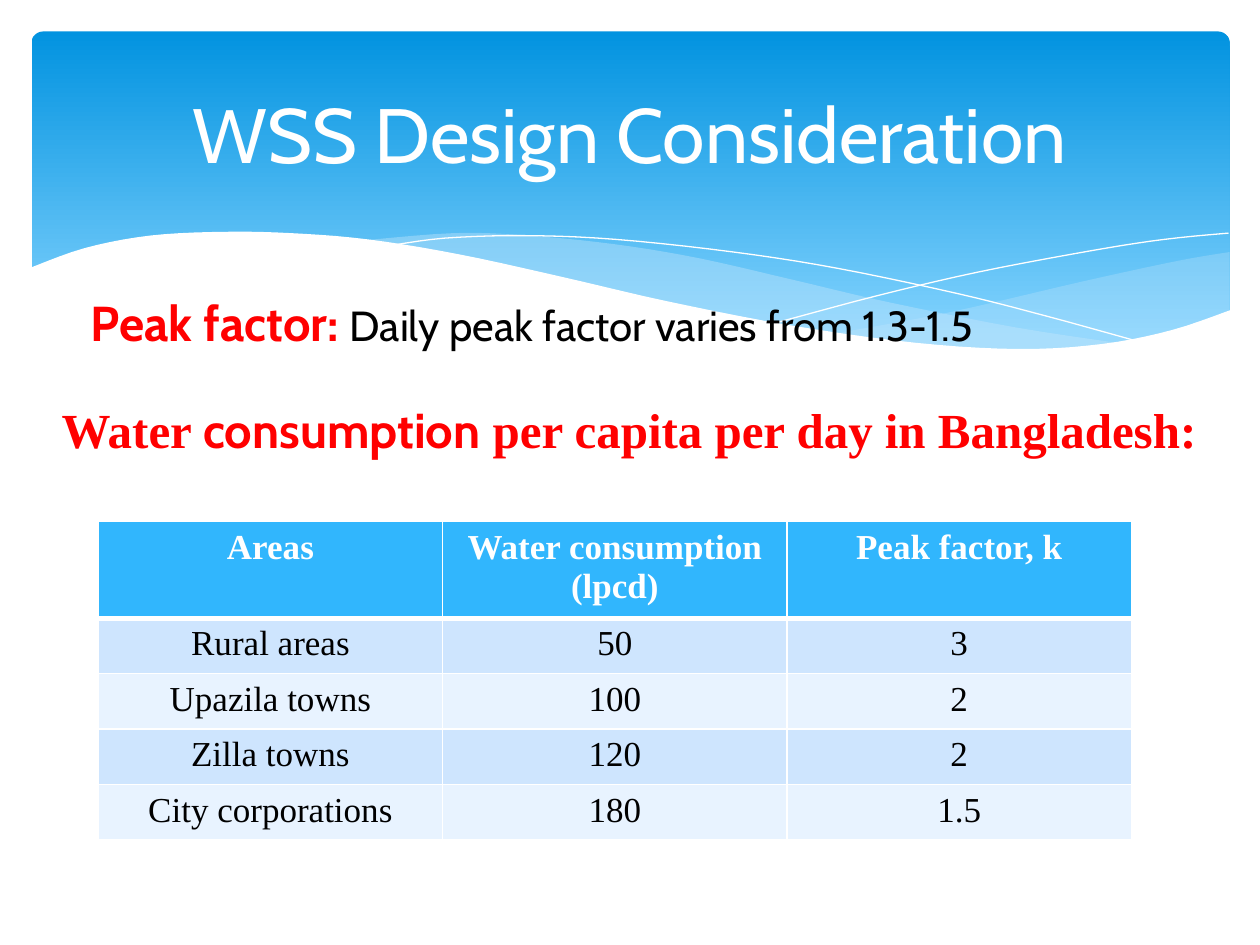
from lxml.etree import SubElement
from pptx import Presentation
from pptx.dml.color import RGBColor
from pptx.enum.shapes import MSO_SHAPE as SHAPE
from pptx.enum.text import MSO_ANCHOR as ANCHOR, MSO_AUTO_SIZE as AUTO, PP_ALIGN as ALIGN
from pptx.oxml import parse_xml
from pptx.oxml.ns import nsdecls, qn
from pptx.util import Emu, Inches, Pt

SANS, SERIF = "Cabin", "Times New Roman"
WHITE, BLACK, RED, MIST = "FFFFFF", "000000", "FF0000", "C6E7FC"
HEADER, BANDS = "31B6FD", ("CEE5FE", "E8F3FF")

TITLE = "WSS Design Consideration"
PEAK = [("Peak factor: ", dict(size=28, color=RED, bold=True)),
        ("Daily peak factor varies from 1.3-1.5", dict(size=24))]
HEADING = [("Water ", SERIF), ("consumption", SANS),
           (" per capita per day in Bangladesh:", SERIF)]
ROWS = [
    ("Areas", "Water consumption (lpcd)", "Peak factor, k"),
    ("Rural areas", "50", "3"),
    ("Upazila towns", "100", "2"),
    ("Zilla towns", "120", "2"),
    ("City corporations", "180", "1.5"),
]
WAVES = [
    dict(fill=MIST, alpha=29, curves=[
        [(9.76, 2), (9.35, 2.07), (8.61, 2.23), (7.53, 2.48), (6.61, 2.65)],
        [(6.61, 2.65), (7.19, 2.72), (8.03, 2.78), (8.81, 2.73), (9.35, 2.62), (9.76, 2.47)]]),
    dict(fill=MIST, alpha=40, curves=[
        [(8.93, 2.73), (8.07, 2.6), (7.06, 2.4), (6.29, 2.22), (5.55, 2.05), (4.89, 1.94),
         (4.2, 1.87), (3.61, 1.85), (2.86, 1.91)],
        [(2.86, 1.91), (3.62, 2.03), (4.49, 2.22), (5.3, 2.4), (6.34, 2.61), (7.09, 2.72),
         (7.85, 2.78), (8.48, 2.77), (8.93, 2.73)]]),
    dict(line=WHITE, curves=[
        [(3.09, 1.95), (3.53, 1.89), (4.16, 1.87), (4.89, 1.9), (5.82, 2), (6.65, 2.13),
         (7.6, 2.33), (8.31, 2.51), (9.07, 2.72)]]),
    dict(line=WHITE, curves=[
        [(6.13, 2.57), (6.95, 2.35), (7.76, 2.16), (8.66, 1.99), (9.24, 1.9), (9.75, 1.85)]]),
    dict(fill=WHITE, curves=[
        [(9.77, 2.46), (9.3, 2.62), (8.75, 2.73), (8.09, 2.77), (7.26, 2.72), (6.26, 2.58),
         (5.29, 2.39), (4.47, 2.2), (3.65, 2.02), (2.92, 1.9), (2.3, 1.85), (1.77, 1.84),
         (1.19, 1.87), (0.67, 1.97), (0.23, 2.13)],
        [(0.23, 3.29), (9.77, 3.29)]]),
]


def rgb(value):
    return RGBColor.from_string(value)


def place(s, left, top, width, height):
    s.left, s.top, s.width, s.height = map(Inches, (left, top, width, height))


def add_text(p, text, size=20, font=SERIF, color=BLACK, bold=False, align=None):
    r = p.add_run()
    r.text = text
    r.font.size, r.font.name, r.font.bold = Pt(size), font, bold
    r.font.color.rgb = rgb(color)
    if align is not None:
        p.alignment = align


def smooth(points, steps=5):
    padded = [points[0], *points, points[-1]]
    result = [points[0]]
    for a, b, c, d in zip(padded, padded[1:], padded[2:], padded[3:]):
        for t in (i / steps for i in range(1, steps + 1)):
            result.append(tuple(
                (2 * q + (r - p) * t + (2 * p - 5 * q + 4 * r - s) * t**2
                 + (3 * q - p - 3 * r + s) * t**3) / 2
                for p, q, r, s in zip(a, b, c, d)))
    return result


def add_wave(shapes, curves, fill=None, alpha=None, line=None):
    points = [(Inches(x), Inches(y)) for curve in curves for x, y in smooth(curve)]
    builder = shapes.build_freeform(*points[0])
    builder.add_line_segments(points[1:], close=fill is not None)
    s = builder.convert_to_shape()
    s.shadow.inherit = False
    if fill:
        s.fill.solid()
        s.fill.fore_color.rgb = rgb(fill)
        s.line.fill.background()
    else:
        s.fill.background()
        s.line.color.rgb = rgb(line)
        s.line.width = Emu(0)
    if alpha:
        color = s.element.spPr.find(qn("a:solidFill"))[0]
        SubElement(color, qn("a:alpha")).set("val", str(alpha * 1000))


def add_banner(shapes):
    s = shapes.add_shape(SHAPE.ROUNDED_RECTANGLE, 0, 0, 0, 0)
    place(s, 0.25, 0.25, 9.51, 2.7)
    s.adjustments[0] = 0.034
    s.shadow.inherit = False
    s.line.fill.background()
    s.fill.gradient()
    s.fill.gradient_angle = 270
    for stop, (position, color) in zip(s.fill.gradient_stops, [(0, "0293E0"), (0.9, "83D3FE")]):
        stop.position, stop.color.rgb = position, rgb(color)


def add_borders(cell, bottom):
    tcPr = cell._tc.get_or_add_tcPr()
    for i, (side, width) in enumerate(zip("LRTB", (1, 1, 1, bottom))):
        tcPr.insert(i, parse_xml(
            f'<a:ln{side} {nsdecls("a")} w="{Pt(width)}"><a:solidFill>'
            f'<a:srgbClr val="{WHITE}"/></a:solidFill></a:ln{side}>'))


def add_table(shapes):
    frame = shapes.add_table(len(ROWS), len(ROWS[0]), Inches(0.78), Inches(4.14),
                             Inches(8.2), Inches(2.5))
    table = frame.table
    for i, row in enumerate(ROWS):
        table.rows[i].height = Inches(0.44 if i else 0.75)
        for j, text in enumerate(row):
            cell = table.cell(i, j)
            cell.fill.solid()
            cell.fill.fore_color.rgb = rgb(BANDS[(i - 1) % 2] if i else HEADER)
            add_borders(cell, 1 if i else 3)
            add_text(cell.text_frame.paragraphs[0], text, color=BLACK if i else WHITE,
                     bold=i == 0, align=ALIGN.CENTER)


def main():
    prs = Presentation()
    prs.slide_width, prs.slide_height = Inches(10), Inches(7.5)
    slide = prs.slides.add_slide(prs.slide_layouts[1])
    shapes = slide.shapes
    title, body = shapes.title, slide.placeholders[1]

    add_banner(shapes)
    for wave in WAVES:
        add_wave(shapes, **wave)

    for s in (body, title):
        shapes._spTree.append(s._element)
        s.text_frame.auto_size = AUTO.NONE
    place(body, 0.62, 2.27, 8.83, 0.7)
    p = body.text_frame.paragraphs[0]
    pPr = p._p.get_or_add_pPr()
    pPr.set("marL", str(Inches(0.3)))
    pPr.set("indent", str(Inches(-0.3)))
    SubElement(pPr, qn("a:buNone"))
    p.space_before, p.space_after = Pt(0), Pt(6)
    for text, style in PEAK:
        add_text(p, text, font=SANS, align=ALIGN.JUSTIFY, **style)

    place(title, 0.5, 0.37, 9, 1.37)
    title.text_frame.vertical_anchor = ANCHOR.MIDDLE
    add_text(title.text_frame.paragraphs[0], TITLE, size=44, font=SANS, color=WHITE,
             align=ALIGN.CENTER)

    s = shapes.add_textbox(0, 0, 0, 0)
    place(s, 0.39, 3.12, 9.3, 0.57)
    s.text_frame.word_wrap = True
    for text, font in HEADING:
        add_text(s.text_frame.paragraphs[0], text, size=28, font=font, color=RED, bold=True)

    add_table(shapes)
    prs.save("out.pptx")


if __name__ == "__main__":
    main()
